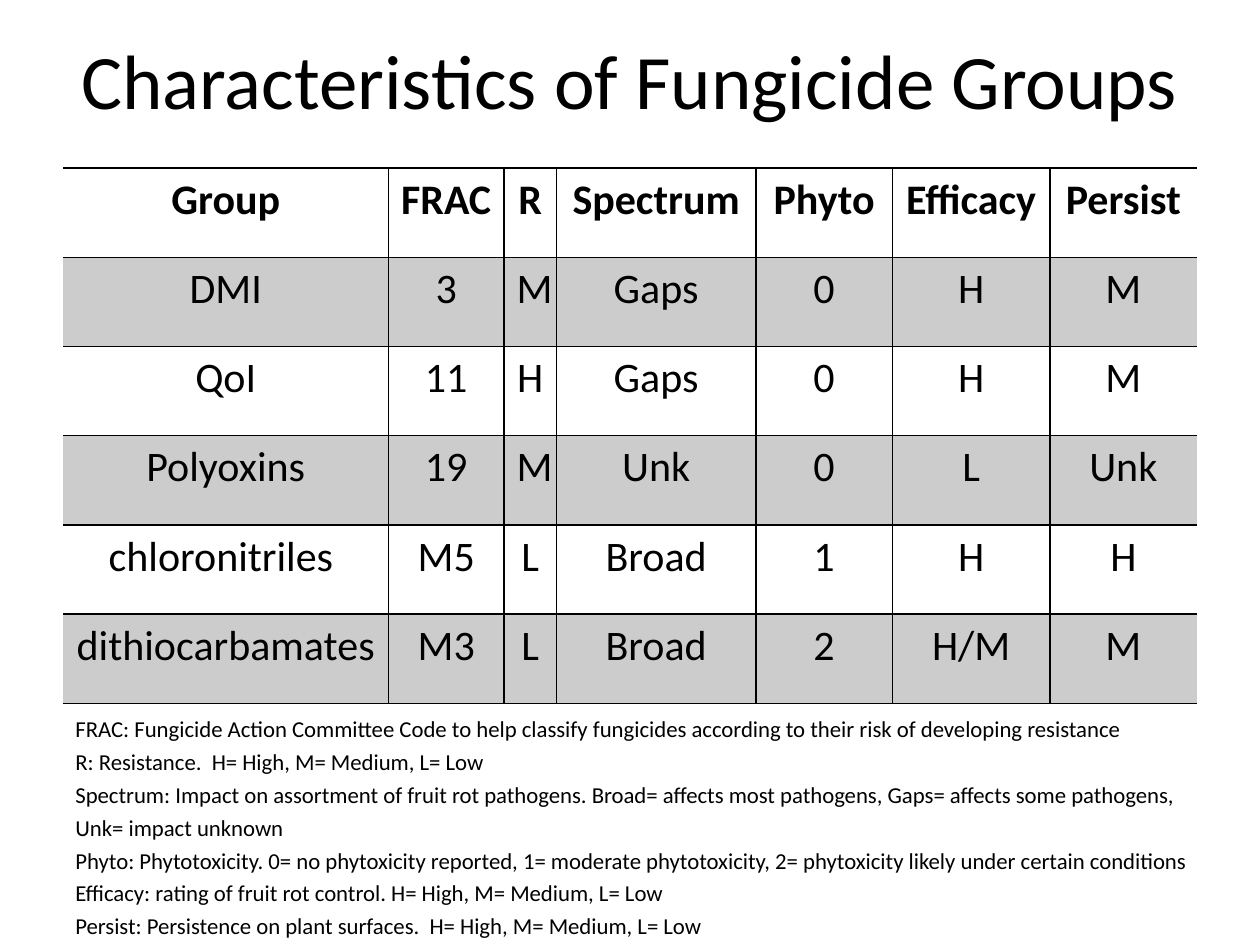
"""Build a slide with a table comparing fungicide groups."""
from lxml.etree import SubElement
from pptx import Presentation
from pptx.dml.color import RGBColor
from pptx.enum.text import MSO_ANCHOR as Anchor, MSO_AUTO_SIZE as AutoSize, PP_ALIGN as Align
from pptx.oxml.ns import qn
from pptx.util import Pt

TITLE = "Characteristics of Fungicide Groups"
ROWS = [
    ("Group", "FRAC", "R", "Spectrum", "Phyto", "Efficacy", "Persist"),
    ("DMI", "3", "M", "Gaps", "0", "H", "M"),
    ("QoI", "11", "H", "Gaps", "0", "H", "M"),
    ("Polyoxins", "19", "M", "Unk", "0", "L", "Unk"),
    ("chloronitriles ", "M5", "L", "Broad", "1", "H", "H"),
    ("dithiocarbamates", "M3", "L", "Broad", "2", "H/M", "M"),
]
NOTES = [
    "FRAC: Fungicide Action Committee Code to help classify fungicides according to their risk of developing resistance",
    "R: Resistance.  H= High, M= Medium, L= Low",
    "Spectrum: Impact on assortment of fruit rot pathogens. Broad= affects most pathogens, "
    "Gaps= affects some pathogens, Unk= impact unknown",
    "Phyto: Phytotoxicity. 0= no phytoxicity reported, 1= moderate phytotoxicity, "
    "2= phytoxicity likely under certain conditions",
    "Efficacy: rating of fruit rot control. H= High, M= Medium, L= Low",
    "Persist: Persistence on plant surfaces.  H= High, M= Medium, L= Low",
]
COLORS = {"ink": "000000"}
FONT = "Calibri"
WIDTHS = [186, 66, 30, 114, 78, 90, 84]
ROW_HEIGHT = 51
LEFT, TABLE_TOP = 36, 96
BAND_ALPHA = 20


def write(frame, lines, size, bold=False, align=Align.LEFT, spacing=None):
    for index, line in enumerate(lines):
        para = frame.paragraphs[0] if index == 0 else frame.add_paragraph()
        para.alignment = align
        para.line_spacing = spacing
        span = para.add_run()
        span.text = line
        span.font.name = FONT
        span.font.size = Pt(size)
        span.font.bold = bold
        span.font.color.rgb = RGBColor.from_string(COLORS["ink"])


def add_borders(cell, sides):
    properties = cell._tc.get_or_add_tcPr()
    for side in "LRTB":
        line = SubElement(properties, qn(f"a:ln{side}"), w=str(Pt(1)))
        if side in sides:
            paint = SubElement(line, qn("a:solidFill"))
            SubElement(paint, qn("a:srgbClr"), val=COLORS["ink"])
        else:
            SubElement(line, qn("a:noFill"))


def fill_cell(cell, banded):
    if not banded:
        cell.fill.background()
        return
    cell.fill.solid()
    cell.fill.fore_color.rgb = RGBColor.from_string(COLORS["ink"])
    color = cell._tc.tcPr.find(qn("a:solidFill")).find(qn("a:srgbClr"))
    SubElement(color, qn("a:alpha"), val=str(BAND_ALPHA * 1000))


def add_group_table(page):
    table = page.shapes.add_table(
        len(ROWS), len(WIDTHS), Pt(LEFT), Pt(TABLE_TOP),
        Pt(sum(WIDTHS)), Pt(ROW_HEIGHT * len(ROWS))).table
    for column, width in zip(table.columns, WIDTHS):
        column.width = Pt(width)
    for r, values in enumerate(ROWS):
        table.rows[r].height = Pt(ROW_HEIGHT)
        for c, value in enumerate(values):
            cell = table.cell(r, c)
            write(cell.text_frame, [value], 24, bold=r == 0, align=Align.CENTER)
            left = "L" if c > 0 else ""
            right = "R" if c < len(WIDTHS) - 1 else ""
            add_borders(cell, left + right + "TB")
            fill_cell(cell, banded=r % 2 == 1)


def main():
    deck = Presentation()
    deck.slide_width, deck.slide_height = Pt(720), Pt(540)
    page = deck.slides.add_slide(deck.slide_layouts[5])

    title = page.shapes.title
    title.left, title.top, title.width, title.height = Pt(LEFT), Pt(0), Pt(648), Pt(90)
    title.text_frame.vertical_anchor = Anchor.MIDDLE
    write(title.text_frame, [TITLE], 44, align=Align.CENTER)

    add_group_table(page)

    notes_top = TABLE_TOP + ROW_HEIGHT * len(ROWS)
    box = page.shapes.add_textbox(Pt(LEFT), Pt(notes_top), Pt(654), Pt(540 - notes_top))
    box.text_frame.word_wrap = True
    box.text_frame.auto_size = AutoSize.SHAPE_TO_FIT_TEXT
    write(box.text_frame, NOTES, 13, spacing=1.2)

    deck.save("out.pptx")


if __name__ == "__main__":
    main()
